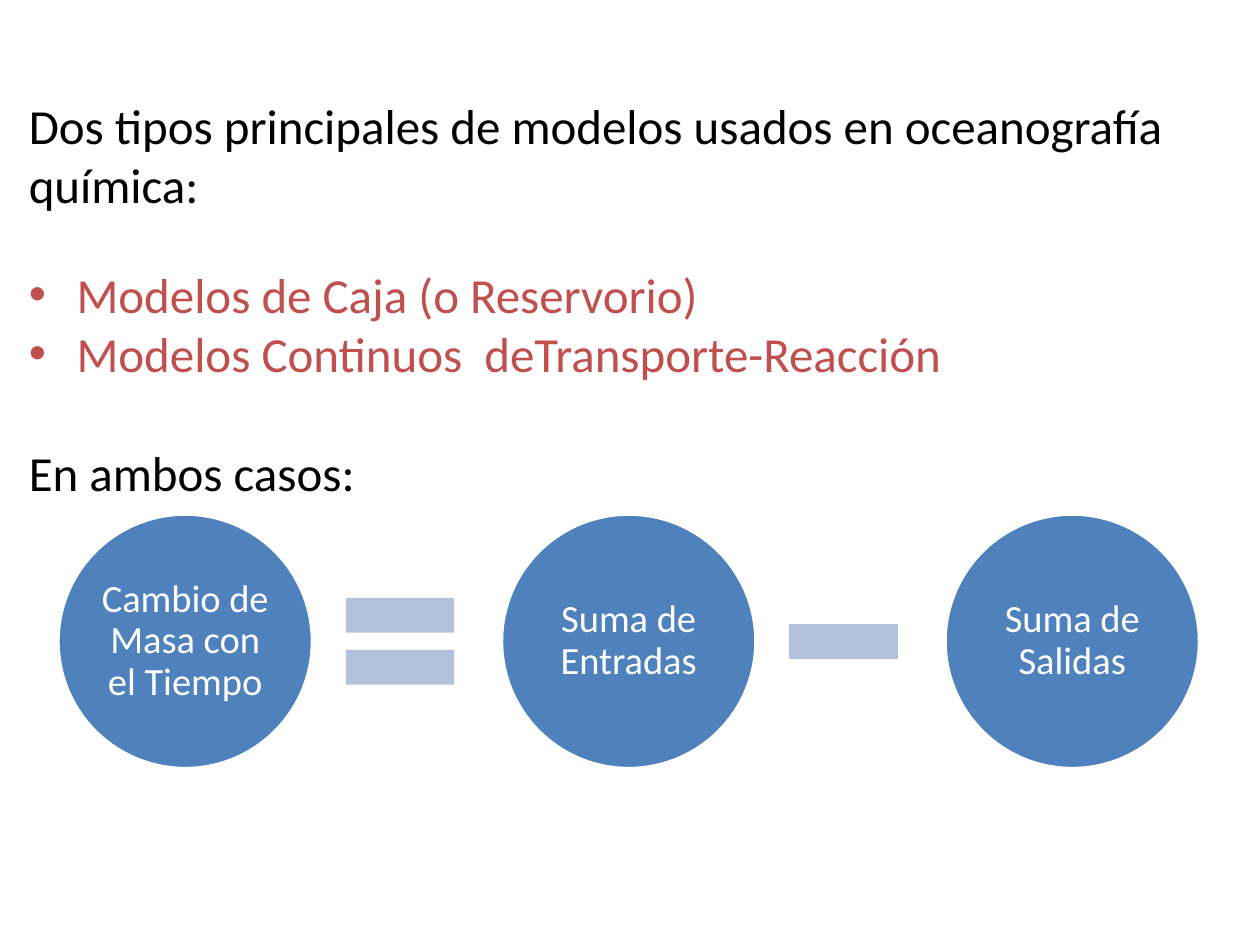
from lxml.etree import SubElement
from pptx import Presentation
from pptx.dml.color import RGBColor
from pptx.enum.shapes import MSO_SHAPE
from pptx.enum.text import MSO_ANCHOR, MSO_AUTO_SIZE, PP_ALIGN
from pptx.oxml.ns import qn
from pptx.util import Inches, Pt

COLORS = {"text": "000000", "model": "C0504D", "term": "4F81BD",
          "operator": "B3C1DB", "white": "FFFFFF"}
FONT = "Calibri"

# Content: text, colour, bulleted, space before in points
STATEMENTS = [
    ("Dos tipos principales de modelos usados en oceanografía química:", "text", False, 0),
    ("Modelos de Caja (o Reservorio)", "model", True, 29.3),
    ("Modelos Continuos  deTransporte-Reacción", "model", True, 0),
    ("En ambos casos:", "text", False, 34.2),
]
TERMS = ["Cambio de Masa con el Tiempo", "Suma de Entradas", "Suma de Salidas"]
OPERATORS = [MSO_SHAPE.MATH_EQUAL, MSO_SHAPE.MATH_MINUS]

# Equation layout, in inches
EQUATION_LEFT, EQUATION_TOP, PITCH = 0.46, 4.08, 3.52
TERM_SIZE, OPERATOR_SIZE, OPERATOR_OFFSET = 2.02, 1.17, 2.13
BULLET_INDENT = 0.38


def set_format(target, values):
    for name, value in values.items():
        setattr(target, name, value)


def add_text(paragraph, text, size, color):
    run = paragraph.add_run()
    run.text = text
    set_format(run.font, {"name": FONT, "size": Pt(size)})
    run.font.color.rgb = RGBColor.from_string(COLORS[color])


def add_bullet(paragraph):
    properties = paragraph._p.get_or_add_pPr()
    properties.set("marL", str(Inches(BULLET_INDENT)))
    properties.set("indent", str(-Inches(BULLET_INDENT)))
    SubElement(properties, qn("a:buFont")).set("typeface", "Arial")
    SubElement(properties, qn("a:buChar")).set("char", "•")


def add_square(slide, kind, left, top, size, color):
    shape = slide.shapes.add_shape(kind, Inches(left), Inches(top), Inches(size), Inches(size))
    shape.shadow.inherit = False
    shape.fill.solid()
    shape.fill.fore_color.rgb = RGBColor.from_string(COLORS[color])
    return shape


def add_statements(slide):
    box = slide.shapes.add_textbox(Inches(0.13), Inches(0.71), Inches(9.85), Inches(3.33))
    frame = box.text_frame
    set_format(frame, {"word_wrap": True, "auto_size": MSO_AUTO_SIZE.SHAPE_TO_FIT_TEXT})
    for i, (text, color, bulleted, gap) in enumerate(STATEMENTS):
        paragraph = frame.add_paragraph() if i else frame.paragraphs[0]
        paragraph.space_before = Pt(gap)
        if bulleted:
            add_bullet(paragraph)
        add_text(paragraph, text, 28, color)


def add_term(slide, text, left):
    circle = add_square(slide, MSO_SHAPE.OVAL, left, EQUATION_TOP, TERM_SIZE, "term")
    circle.line.color.rgb = RGBColor.from_string(COLORS["white"])
    circle.line.width = Pt(2)
    frame = circle.text_frame
    margins = {f"margin_{side}": Inches(0.03) for side in ("left", "right", "top", "bottom")}
    set_format(frame, {"word_wrap": True, "vertical_anchor": MSO_ANCHOR.MIDDLE, **margins})
    paragraph = frame.paragraphs[0]
    set_format(paragraph, {"alignment": PP_ALIGN.CENTER, "line_spacing": 0.9})
    add_text(paragraph, text, 22, "white")


def main():
    presentation = Presentation()
    set_format(presentation, {"slide_width": Inches(10), "slide_height": Inches(7.5)})
    slide = presentation.slides.add_slide(presentation.slide_layouts[6])
    add_statements(slide)

    # Equation: terms at an equal pitch, operators centred on their height
    for i, term in enumerate(TERMS):
        add_term(slide, term, EQUATION_LEFT + i * PITCH)
    operator_top = EQUATION_TOP + (TERM_SIZE - OPERATOR_SIZE) / 2
    for i, kind in enumerate(OPERATORS):
        left = EQUATION_LEFT + OPERATOR_OFFSET + i * PITCH
        operator = add_square(slide, kind, left, operator_top, OPERATOR_SIZE, "operator")
        operator.line.fill.background()

    presentation.save("out.pptx")


if __name__ == "__main__":
    main()
